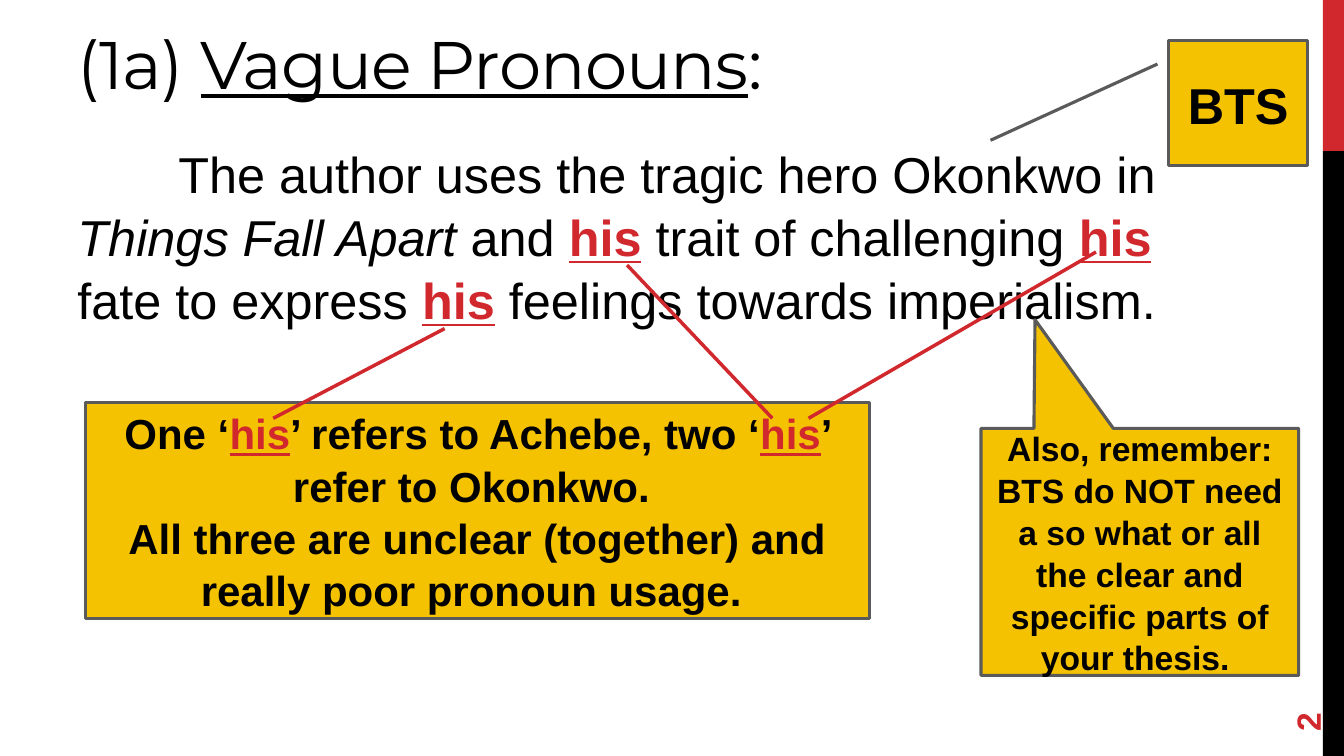
from lxml.etree import SubElement
from pptx import Presentation
from pptx.dml.color import RGBColor
from pptx.enum.shapes import MSO_CONNECTOR, MSO_SHAPE
from pptx.enum.text import MSO_ANCHOR, PP_ALIGN
from pptx.oxml.ns import qn
from pptx.util import Inches, Pt

RED = RGBColor(0xD1, 0x28, 0x2E)
BLACK = RGBColor(0x00, 0x00, 0x00)
GOLD = RGBColor(0xF5, 0xC2, 0x01)
GRAY = RGBColor(0x5A, 0x5A, 0x5A)

SLIDE_W, SLIDE_H = 13.33, 7.5
BAND_W = 0.21
BAND_X = SLIDE_W - BAND_W
MARGIN = 0.67
LINE_SPACING = 1.04

PRONOUN = dict(color=RED, bold=True, underline=True)


def inches(*lengths):
    return [Inches(length) for length in lengths]


def write(frame, paragraphs, size, font="Arial", align=PP_ALIGN.LEFT,
          anchor=MSO_ANCHOR.TOP, spacing=LINE_SPACING, **base):
    """Fill a frame; each paragraph is a list of strings or (string, style) pairs."""
    frame.word_wrap = True
    frame.vertical_anchor = anchor
    for index, pieces in enumerate(paragraphs):
        paragraph = frame.add_paragraph() if index else frame.paragraphs[0]
        paragraph.alignment = align
        paragraph.line_spacing = spacing
        for piece in pieces:
            words, style = (piece, {}) if isinstance(piece, str) else piece
            style = {"color": BLACK, **base, **style}
            run = paragraph.add_run()
            run.text = words
            run.font.name = font
            run.font.size = Pt(size)
            run.font.color.rgb = style["color"]
            run.font.bold = style.get("bold", False)
            run.font.italic = style.get("italic", False)
            run.font.underline = style.get("underline", False)


def add_text(slide, box, paragraphs, size, **options):
    text = slide.shapes.add_textbox(*inches(*box))
    write(text.text_frame, paragraphs, size, **options)
    return text


def add_band(slide, top, height, color):
    band = slide.shapes.add_shape(
        MSO_SHAPE.RECTANGLE, *inches(BAND_X, top, BAND_W, height))
    band.shadow.inherit = False
    band.fill.solid()
    band.fill.fore_color.rgb = color
    band.line.fill.background()


def add_note(slide, preset, box, paragraphs, size, pointer=()):
    """Add a gold note; pointer holds the callout's adjustments."""
    note = slide.shapes.add_shape(preset, *inches(*box))
    for index, value in enumerate(pointer):
        note.adjustments[index] = value
    note.shadow.inherit = False
    note.fill.solid()
    note.fill.fore_color.rgb = GOLD
    note.line.color.rgb = GRAY
    note.line.width = Pt(2.25)
    write(note.text_frame, paragraphs, size, align=PP_ALIGN.CENTER,
          anchor=MSO_ANCHOR.MIDDLE, bold=True)


def add_link(slide, start, end):
    link = slide.shapes.add_connector(
        MSO_CONNECTOR.STRAIGHT, *inches(*start, *end))
    link.line.color.rgb = RED
    link.line.width = Pt(2.5)
    SubElement(link.element.spPr, qn("a:effectLst"))


def main():
    deck = Presentation()
    deck.slide_width, deck.slide_height = inches(SLIDE_W, SLIDE_H)
    slide = deck.slides.add_slide(deck.slide_layouts[6])

    add_band(slide, 0, SLIDE_H * 0.2, RED)
    add_band(slide, SLIDE_H * 0.2, SLIDE_H * 0.8, BLACK)

    title = add_text(
        slide, (MARGIN, 0.17, 8.44, 1.19),
        [["(1a) ", ("Vague Pronouns", dict(underline=True)), ":"]],
        48, font="Montserrat", spacing=1.0)
    for run in title.text_frame.paragraphs[0].runs:
        run.font._element.set("spc", "-60")

    thesis = add_text(
        slide, (MARGIN, 1.35, 11.11, 2.26),
        [["The author uses the tragic hero Okonkwo in ",
          ("Things Fall Apart", dict(italic=True)), " and ",
          ("his", PRONOUN), " trait of challenging ",
          ("his", PRONOUN), " fate to express ",
          ("his", PRONOUN), " feelings towards imperialism."]], 36)
    first_line = thesis.text_frame.paragraphs[0]._p.get_or_add_pPr()
    first_line.set("indent", str(Inches(1)))

    page_number = add_text(slide, (12.24, 6.37, 1.44, 0.53), [["2"]], 24,
                           anchor=MSO_ANCHOR.MIDDLE, color=RED, bold=True)
    page_number.rotation = 270

    add_note(slide, MSO_SHAPE.LINE_CALLOUT_1, (11.59, 0.4, 1.38, 1.24),
             [["BTS"]], 36, pointer=(0.19, -0.08, 0.8, -1.28))
    add_note(slide, MSO_SHAPE.FLOWCHART_PROCESS, (0.85, 3.99, 7.77, 2.15),
             [["One ‘", ("his", PRONOUN), "’ refers to Achebe, two ‘",
               ("his", PRONOUN), "’ refer to Okonkwo. "],
              ["All three are unclear (together) and really poor pronoun usage. "]],
             30)

    note_edge = 4.15
    for note_x, pronoun in ((2.71, (4.41, 3.26)),
                            (7.66, (6.22, 2.63)),
                            (8.02, (10.87, 2.5))):
        add_link(slide, (note_x, note_edge), pronoun)

    add_note(slide, MSO_SHAPE.RECTANGULAR_CALLOUT, (9.73, 4.25, 3.15, 2.45),
             [["Also, remember: BTS do NOT need a so what or all the clear "
               "and specific parts of your thesis. "]],
             24, pointer=(-0.33, -0.94))

    deck.save("out.pptx")


if __name__ == "__main__":
    main()
